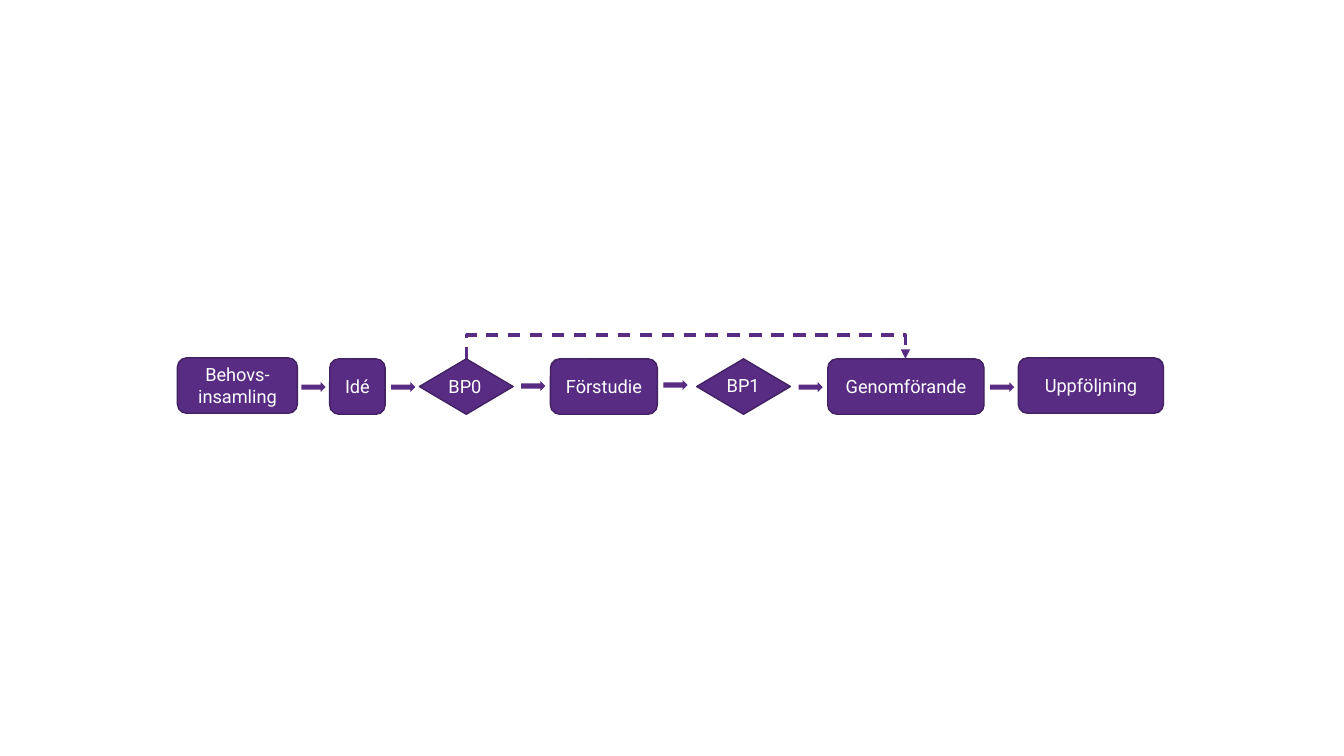
from dataclasses import dataclass

from lxml.etree import SubElement
from pptx import Presentation
from pptx.dml.color import RGBColor
from pptx.enum.dml import MSO_LINE
from pptx.enum.shapes import MSO_CONNECTOR, MSO_SHAPE
from pptx.enum.text import MSO_ANCHOR, MSO_AUTO_SIZE, PP_ALIGN
from pptx.oxml.ns import qn
from pptx.shapes.autoshape import Shape
from pptx.slide import Slide
from pptx.text.text import TextFrame
from pptx.util import Inches, Pt

PURPLE = "582C83"
OUTLINE = "412161"
WHITE = "FFFFFF"
STEP_HEIGHT = 0.55


@dataclass(frozen=True)
class Step:
    text: str
    left: float
    top: float
    width: float


@dataclass(frozen=True)
class Decision:
    text: str
    left: float
    text_left: float
    text_top: float


@dataclass(frozen=True)
class Arrow:
    left: float
    top: float


STEPS = [
    Step("Behovs-insamling", 1.76, 3.55, 1.19),
    Step("Idé", 3.27, 3.56, 0.55),
    Step("Förstudie", 5.46, 3.56, 1.06),
    Step("Genomförande", 8.21, 3.56, 1.55),
    Step("Uppföljning", 10.1, 3.55, 1.44),
]
DECISIONS = [
    Decision("BP0", 4.16, 4.35, 3.67),
    Decision("BP1", 6.91, 7.11, 3.66),
]
ARROWS = [
    Arrow(2.99, 3.79),
    Arrow(3.88, 3.79),
    Arrow(5.17, 3.78),
    Arrow(6.58, 3.77),
    Arrow(7.92, 3.79),
    Arrow(9.82, 3.79),
]


def color(value: str) -> RGBColor:
    return RGBColor.from_string(value)


def add_block(s: Slide, kind: MSO_SHAPE, left: float, top: float,
              width: float, height: float, outlined: bool = True) -> Shape:
    sp = s.shapes.add_shape(kind, Inches(left), Inches(top), Inches(width), Inches(height))
    sp.shadow.inherit = False
    sp.fill.solid()
    sp.fill.fore_color.rgb = color(PURPLE)
    if outlined:
        sp.line.color.rgb = color(OUTLINE)
        sp.line.width = Pt(1)
    else:
        sp.line.fill.background()
    return sp


def write(tf: TextFrame, text: str, align: PP_ALIGN) -> None:
    tf.word_wrap = True
    p = tf.paragraphs[0]
    p.alignment = align
    r = p.add_run()
    r.text = text
    r.font.name = "Roboto"
    r.font.size = Pt(13)
    r.font.color.rgb = color(WHITE)


def add_step(s: Slide, step: Step) -> None:
    sp = add_block(s, MSO_SHAPE.ROUNDED_RECTANGLE, step.left, step.top, step.width, STEP_HEIGHT)
    sp.text_frame.vertical_anchor = MSO_ANCHOR.MIDDLE
    write(sp.text_frame, step.text, PP_ALIGN.CENTER)


def add_decision(s: Slide, decision: Decision) -> None:
    add_block(s, MSO_SHAPE.DIAMOND, decision.left, 3.56, 0.93, STEP_HEIGHT)
    box = s.shapes.add_textbox(Inches(decision.text_left), Inches(decision.text_top),
                               Inches(0.57), Inches(0.32))
    box.text_frame.auto_size = MSO_AUTO_SIZE.SHAPE_TO_FIT_TEXT
    write(box.text_frame, decision.text, PP_ALIGN.LEFT)


def add_shortcut(s: Slide, x1: float, y1: float, x2: float, y2: float, rise: float) -> None:
    span, drop = x2 - x1, y1 - y2
    mid_x, mid_y = (x1 + x2) / 2, (y1 + y2) / 2
    cxn = s.shapes.add_connector(
        MSO_CONNECTOR.ELBOW,
        Inches(mid_x + drop / 2), Inches(mid_y + span / 2),
        Inches(mid_x - drop / 2), Inches(mid_y - span / 2))
    cxn.line.color.rgb = color(PURPLE)
    cxn.line.width = Pt(2.25)
    cxn.line.dash_style = MSO_LINE.DASH
    props = cxn._element.spPr
    props.find(qn("a:xfrm")).set("rot", "5400000")
    guides = props.find(qn("a:prstGeom")).find(qn("a:avLst"))
    SubElement(guides, qn("a:gd"), name="adj1", fmla=f"val {round(rise / drop * 100000)}")
    SubElement(props.find(qn("a:ln")), qn("a:tailEnd"), type="triangle")
    SubElement(props, qn("a:effectLst"))


def main() -> None:
    prs = Presentation()
    prs.slide_width = Inches(13.33)
    prs.slide_height = Inches(7.5)
    s = prs.slides.add_slide(prs.slide_layouts[6])
    for step in STEPS:
        add_step(s, step)
    add_shortcut(s, 4.63, 3.57, 8.98, 3.56, 0.25)
    for decision in DECISIONS:
        add_decision(s, decision)
    for arrow in ARROWS:
        add_block(s, MSO_SHAPE.RIGHT_ARROW, arrow.left, arrow.top, 0.24, 0.1, outlined=False)
    prs.save("out.pptx")


if __name__ == "__main__":
    main()
